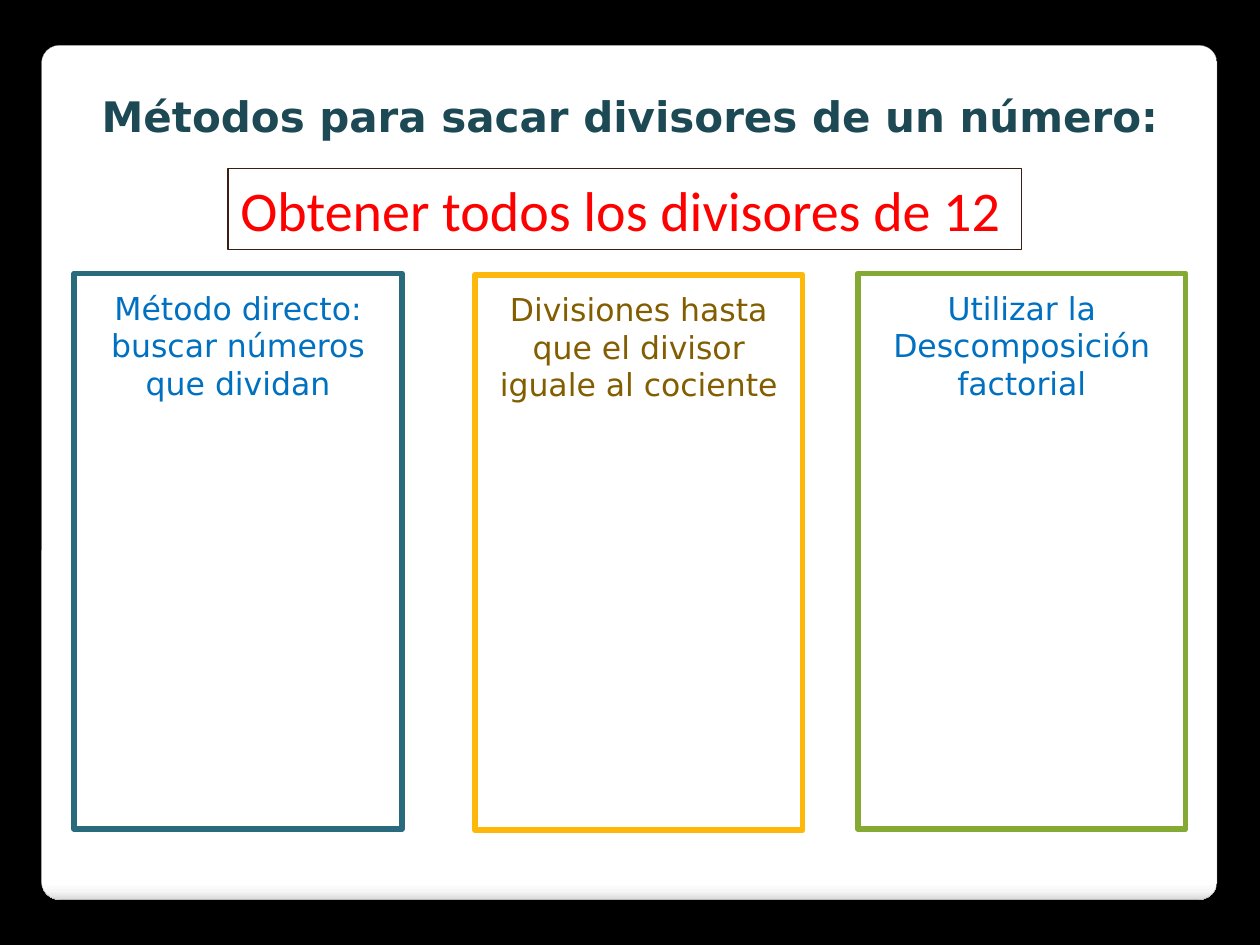
from copy import deepcopy
from dataclasses import dataclass

from pptx import Presentation
from pptx.dml.color import RGBColor as RGB
from pptx.enum.shapes import MSO_SHAPE as SHAPE
from pptx.enum.text import MSO_ANCHOR as ANCHOR, PP_ALIGN as ALIGN
from pptx.util import Inches, Pt


@dataclass(frozen=True)
class Theme:
    background: str = "000000"
    paper: str = "FFFFFF"
    card_line: str = "A4A4A4"
    card_stops: tuple = ((0, "FFFFFF"), (0.98, "FFFFFF"), (0.99, "F7F7F7"), (1, "DADADA"))
    title: str = "1C4954"
    task: str = "FF0000"
    task_line: str = "3B1D15"
    blue: str = "0070C0"
    brown: str = "835E01"
    teal_line: str = "296B7C"
    yellow_line: str = "FEB80A"
    green_line: str = "84AA33"
    main_font: str = "DejaVu Sans"
    task_font: str = "Calibri"
    title_size: int = 24
    task_size: int = 32
    method_size: int = 18


THEME = Theme()


def color(code):
    return RGB.from_string(code)


def inches(box):
    return [Inches(v) for v in box]


def write(sp, text, *, size, code, font=THEME.main_font, bold=False,
          align=ALIGN.CENTER, anchor=ANCHOR.TOP, top=0.05):
    tf = sp.text_frame
    tf.word_wrap = True
    tf.vertical_anchor = anchor
    tf.margin_left = tf.margin_right = Inches(0.1)
    tf.margin_top, tf.margin_bottom = Inches(top), Inches(0.05)
    p = tf.paragraphs[0]
    p.alignment = align
    r = p.add_run()
    r.text = text
    r.font.name, r.font.size, r.font.bold = font, Pt(size), bold
    r.font.color.rgb = color(code)


def add_box(s, box, line, width, shape=SHAPE.RECTANGLE):
    sp = s.shapes.add_shape(shape, *inches(box))
    sp.shadow.inherit = False
    sp.line.color.rgb = color(line)
    sp.line.width = Pt(width)
    return sp


def add_card(s, box):
    sp = add_box(s, box, THEME.card_line, 0.16, SHAPE.ROUNDED_RECTANGLE)
    sp.adjustments[0] = 0.021
    sp.fill.gradient()
    sp.fill.gradient_angle = 270
    stop_list = sp._element.spPr.gradFill.gsLst
    for _ in range(len(THEME.card_stops) - len(stop_list)):
        stop_list.append(deepcopy(stop_list[-1]))
    for stop, (position, code) in zip(sp.fill.gradient_stops, THEME.card_stops):
        stop.position = position
        stop.color.rgb = color(code)
    s.shapes._spTree.insert(2, sp._element)


def add_title(s, box, text):
    sp = s.shapes.title
    sp.left, sp.top, sp.width, sp.height = inches(box)
    write(sp, text, size=THEME.title_size, code=THEME.title, bold=True)


def add_method(s, box, text, code, line):
    sp = add_box(s, box, line, 3.35)
    sp.fill.solid()
    sp.fill.fore_color.rgb = color(THEME.paper)
    write(sp, text, size=THEME.method_size, code=code, top=0.12)


def add_task(s, box, text):
    sp = add_box(s, box, THEME.task_line, 0.75)
    sp.fill.background()
    write(sp, text, size=THEME.task_size, code=THEME.task,
          font=THEME.task_font, align=ALIGN.LEFT)


def main():
    prs = Presentation()
    prs.slide_width, prs.slide_height = Inches(10), Inches(7.5)
    s = prs.slides.add_slide(prs.slide_layouts[5])
    s.background.fill.solid()
    s.background.fill.fore_color.rgb = color(THEME.background)

    add_card(s, (0.33, 0.36, 9.33, 6.78))
    add_title(s, (0.39, 0.67, 9.22, 0.5), "Métodos para sacar divisores de un número:")
    methods = [
        (0.59, 2.17, "Método directo: buscar números que dividan", THEME.blue, THEME.teal_line),
        (3.77, 2.18, "Divisiones hasta que el divisor iguale al cociente",
         THEME.brown, THEME.yellow_line),
        (6.81, 2.17, "Utilizar la Descomposición factorial", THEME.blue, THEME.green_line),
    ]
    for left, top, text, code, line in methods:
        add_method(s, (left, top, 2.6, 4.41), text, code, line)
    add_task(s, (1.81, 1.34, 6.3, 0.64), "Obtener todos los divisores de 12")

    prs.save("out.pptx")


if __name__ == "__main__":
    main()
